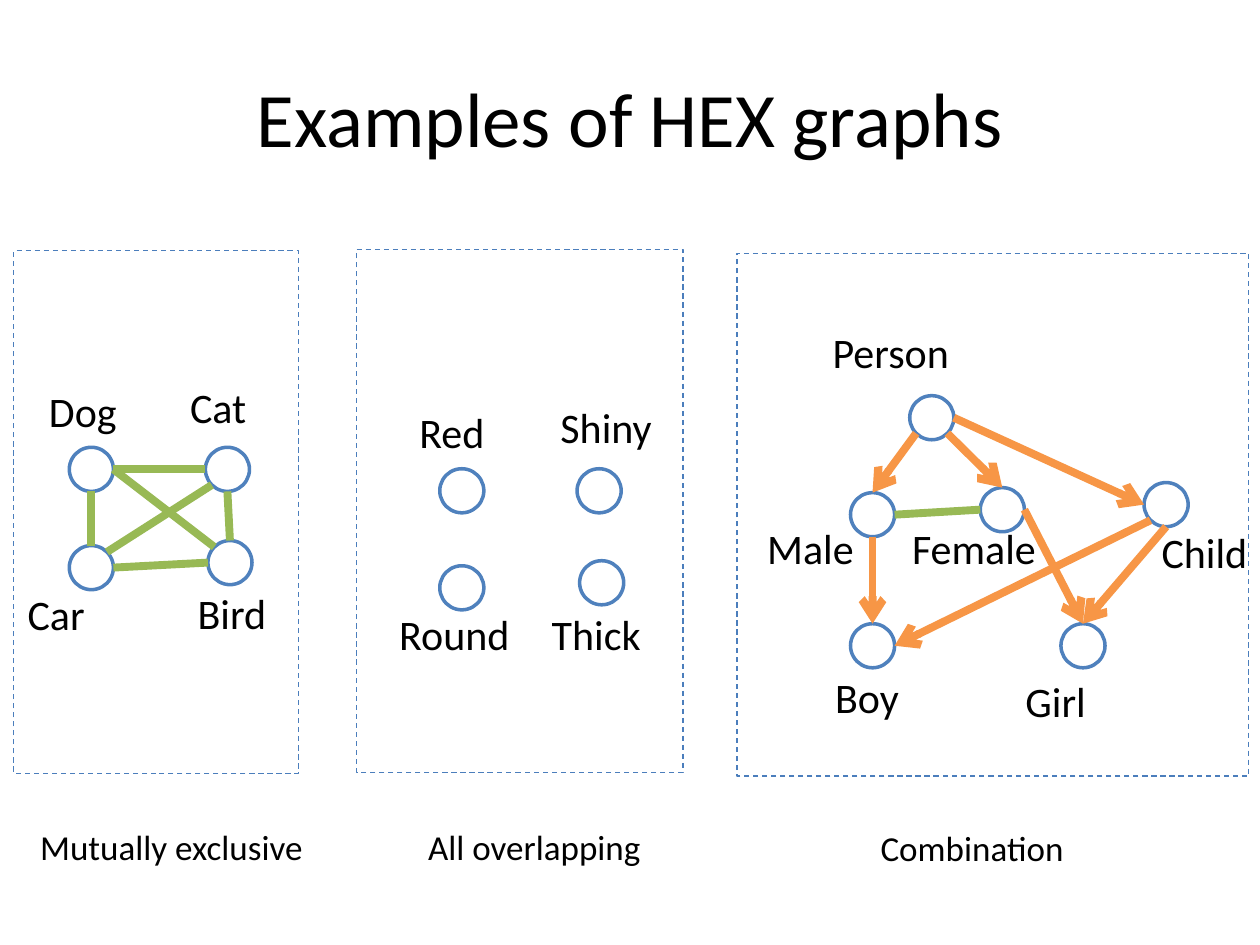
import pptx
import pptx.dml.color
import pptx.enum.dml
import pptx.enum.shapes
import pptx.enum.text
import pptx.oxml
import pptx.oxml.ns
import pptx.util

COLORS = {
    "text": "000000", "node": "FFFFFF", "outline": "4F81BD",
    "panel": "4B7EBC", "exclusion": "98B955", "hierarchy": "F79646",
}
COLUMNS, ROWS = 100, 75
NODE_SIZE = 3.5
LABEL_WIDTH = 15.2

# Where an edge meets a node, as (x, y) shares of its radius
SIDES = {
    "top": (0, -1), "left": (-1, 0), "bottom": (0, 1), "right": (1, 0),
    "top left": (-0.71, -0.71), "top right": (0.71, -0.71),
    "bottom left": (-0.71, 0.71), "bottom right": (0.71, 0.71),
}

# Panel column, row, width; then caption, its column, row, width
PANELS = [
    (1.1, 19.9, 22.6, "Mutually exclusive", 2.2, 65, 27.1),
    (28.3, 19.8, 25.9, "All overlapping", 33, 65, 22),
    (58.5, 20.1, 40.6, "Combination", 68.9, 65.1, 22),
]
PANEL_HEIGHT = 41.5

# Node column, row; then label column, row, width
NODES = {
    "Dog": (5.5, 35.5, 2.9, 30.1, LABEL_WIDTH),
    "Cat": (16.3, 35.5, 14.1, 29.8, LABEL_WIDTH),
    "Car": (5.5, 43.3, 1.2, 46.2, 7.2),
    "Bird": (16.5, 42.9, 14.7, 46.1, LABEL_WIDTH),
    "Red": (34.9, 37.2, 32.3, 31.8, LABEL_WIDTH),
    "Shiny": (45.8, 37.2, 43.5, 31.4, 10.4),
    "Round": (34.9, 44.9, 30.7, 47.8, 11.8),
    "Thick": (46, 44.5, 42.8, 47.8, LABEL_WIDTH),
    "Person": (72.2, 31.4, 65.1, 25.4, LABEL_WIDTH),
    "Male": (67.5, 39.1, 59.9, 41, LABEL_WIDTH),
    "Female": (77.8, 38.7, 71.4, 41, LABEL_WIDTH),
    "Child": (90.8, 38.3, 91.2, 41.3, LABEL_WIDTH),
    "Boy": (67.5, 49.5, 65.3, 52.8, 10.5),
    "Girl": (84.2, 49.5, 80.4, 53.1, 10.5),
}

EXCLUSIONS = [
    ("Dog", "right", "Cat", "left"),
    ("Dog", "bottom", "Car", "top"),
    ("Bird", "left", "Car", "right"),
    ("Bird", "top", "Cat", "bottom"),
    ("Dog", "right", "Bird", "top left"),
    ("Car", "top right", "Cat", "bottom left"),
    ("Male", "right", "Female", "left"),
]
HIERARCHIES = [
    ("Person", "bottom left", "Male", "top"),
    ("Person", "bottom right", "Female", "top"),
    ("Person", "right", "Child", "left"),
    ("Male", "bottom", "Boy", "top"),
    ("Child", "bottom left", "Boy", "right"),
    ("Female", "right", "Girl", "top"),
    ("Child", "bottom", "Girl", "top"),
]


class GraphSlide:
    """Holds the style and the current slide; lengths are grid columns and rows."""

    font = "Calibri"

    def __init__(self, presentation):
        self.column = presentation.slide_width / COLUMNS
        self.row = presentation.slide_height / ROWS
        self.slide = presentation.slides.add_slide(presentation.slide_layouts[6])

    def place(self, column, row):
        return round(column * self.column), round(row * self.row)

    def color(self, name):
        return pptx.dml.color.RGBColor.from_string(COLORS[name])

    def text(self, words, column, row, width, height, size, centered=False):
        box = self.slide.shapes.add_textbox(
            *self.place(column, row), *self.place(width, height))
        frame = box.text_frame
        frame.word_wrap = True
        paragraph = frame.paragraphs[0]
        if centered:
            frame.vertical_anchor = pptx.enum.text.MSO_ANCHOR.MIDDLE
            paragraph.alignment = pptx.enum.text.PP_ALIGN.CENTER
        run = paragraph.add_run()
        run.text = words
        run.font.name = self.font
        run.font.size = pptx.util.Pt(size)
        run.font.color.rgb = self.color("text")

    def outlined(self, kind, column, row, width, height, line, weight):
        shape = self.slide.shapes.add_shape(
            kind, *self.place(column, row), *self.place(width, height))
        shape.shadow.inherit = False
        shape.line.color.rgb = self.color(line)
        shape.line.width = pptx.util.Pt(weight)
        return shape

    def panel(self, column, row, width):
        shape = self.outlined(pptx.enum.shapes.MSO_SHAPE.RECTANGLE, column, row,
                              width, PANEL_HEIGHT, "panel", 0.75)
        shape.fill.background()
        shape.line.dash_style = pptx.enum.dml.MSO_LINE.DASH

    def node(self, column, row):
        shape = self.outlined(pptx.enum.shapes.MSO_SHAPE.OVAL, column, row,
                              NODE_SIZE, NODE_SIZE, "outline", 2)
        shape.fill.solid()
        shape.fill.fore_color.rgb = self.color("node")

    def joint(self, name, side):
        column, row = NODES[name][:2]
        across, down = SIDES[side]
        radius = NODE_SIZE / 2
        return self.place(column + radius * (1 + across), row + radius * (1 + down))

    def edge(self, start, start_side, end, end_side, color, arrow=False):
        connector = self.slide.shapes.add_connector(
            pptx.enum.shapes.MSO_CONNECTOR.STRAIGHT,
            *self.joint(start, start_side), *self.joint(end, end_side))
        connector.line.color.rgb = self.color(color)
        connector.line.width = pptx.util.Pt(4.5)
        if arrow:
            tail = pptx.oxml.parse_xml(
                f'<a:tailEnd {pptx.oxml.ns.nsdecls("a")} type="arrow"/>')
            connector.line._get_or_add_ln().append(tail)
        connector._element.spPr.append(
            pptx.oxml.parse_xml(f'<a:effectLst {pptx.oxml.ns.nsdecls("a")}/>'))


def main():
    presentation = pptx.Presentation()
    presentation.slide_width = pptx.util.Inches(10)
    presentation.slide_height = pptx.util.Inches(7.5)
    graph = GraphSlide(presentation)

    # Title
    graph.text("Examples of HEX graphs", 5, 3, 90, 12.5, 44, centered=True)

    # Panels with captions
    for column, row, width, caption, *caption_box in PANELS:
        graph.panel(column, row, width)
        graph.text(caption, *caption_box, 4.4, 20)

    # Nodes with labels
    for label, (column, row, *label_box) in NODES.items():
        graph.node(column, row)
        graph.text(label, *label_box, 5, 24)

    # Edges
    for link in EXCLUSIONS:
        graph.edge(*link, "exclusion")
    for link in HIERARCHIES:
        graph.edge(*link, "hierarchy", arrow=True)

    presentation.save("out.pptx")


if __name__ == "__main__":
    main()
